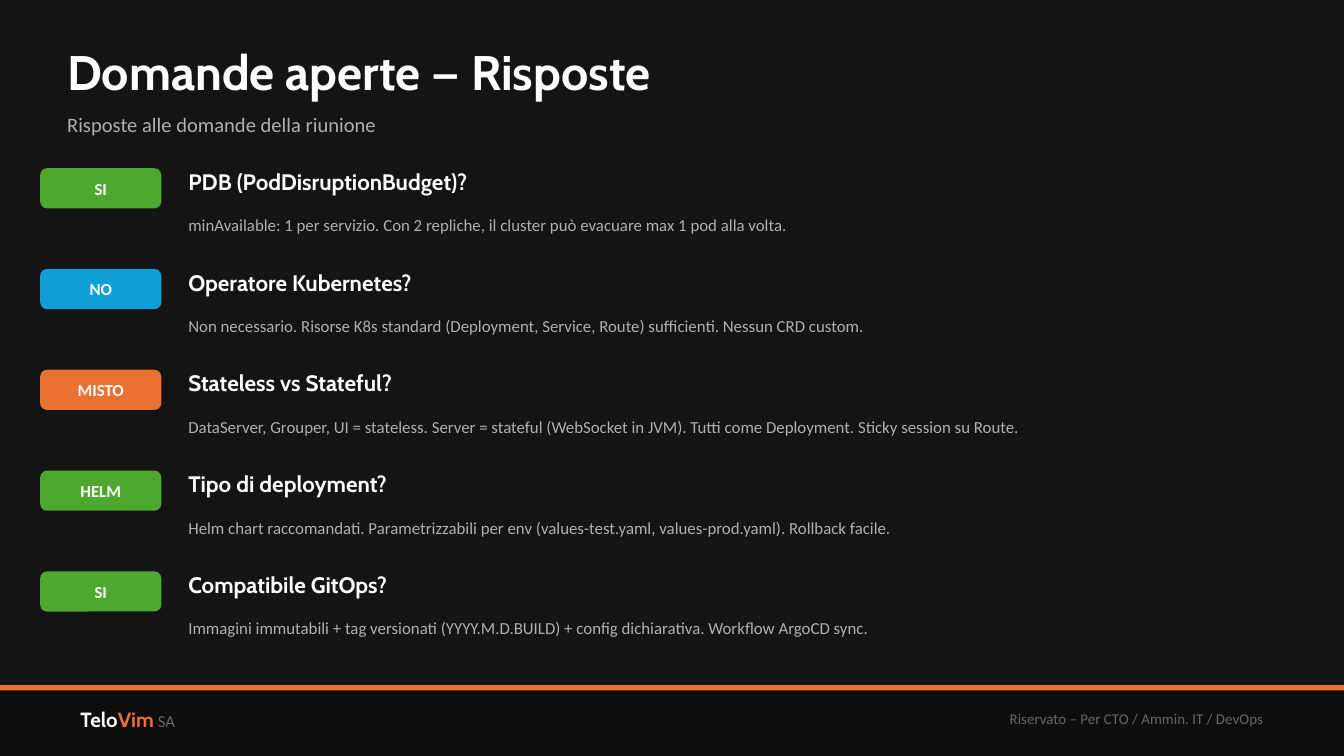
import pptx
import pptx.dml.color
import pptx.enum.shapes
import pptx.enum.text
import pptx.util

Cm = pptx.util.Cm
ALIGN = pptx.enum.text.PP_ALIGN
SHAPE = pptx.enum.shapes.MSO_SHAPE

COLOURS = {
    "background": "141414",
    "footer": "0D0D0D",
    "white": "FFFFFF",
    "soft": "B0B0B0",
    "dim": "666666",
    "orange": "E97132",
    "green": "4EA72E",
    "blue": "0F9ED5",
}
HEADING_FONT = "Cabin"
BODY_FONT = "Calibri"

PAGE_WIDTH = 25.4
PAGE_HEIGHT = 14.29
MARGIN = 1.27
FOOTER_TOP = 12.95
FIRST_ROW_TOP = 3.05
ROW_STEP = 7.62 / 4

ANSWERS = [
    ("SI", "green", "PDB (PodDisruptionBudget)?",
     "minAvailable: 1 per servizio. Con 2 repliche, il cluster può evacuare max 1 pod alla volta."),
    ("NO", "blue", "Operatore Kubernetes?",
     "Non necessario. Risorse K8s standard (Deployment, Service, Route) sufficienti. "
     "Nessun CRD custom."),
    ("MISTO", "orange", "Stateless vs Stateful?",
     "DataServer, Grouper, UI = stateless. Server = stateful (WebSocket in JVM). "
     "Tutti come Deployment. Sticky session su Route."),
    ("HELM", "green", "Tipo di deployment?",
     "Helm chart raccomandati. Parametrizzabili per env (values-test.yaml, values-prod.yaml). "
     "Rollback facile."),
    ("SI", "green", "Compatibile GitOps?",
     "Immagini immutabili + tag versionati (YYYY.M.D.BUILD) + config dichiarativa. "
     "Workflow ArgoCD sync."),
]


def colour(name):
    return pptx.dml.color.RGBColor.from_string(COLOURS[name])


def write_text(box, spans, align=ALIGN.LEFT, inset=0):
    frame = box.text_frame
    frame.word_wrap = True
    frame.vertical_anchor = pptx.enum.text.MSO_ANCHOR.MIDDLE
    frame.margin_left = frame.margin_right = Cm(inset)
    frame.margin_top = frame.margin_bottom = Cm(inset / 2)
    para = frame.paragraphs[0]
    para.alignment = align
    for text, font, size, tint, bold in spans:
        span = para.add_run()
        span.text = text
        span.font.name = font
        span.font.size = pptx.util.Pt(size)
        span.font.bold = bold
        span.font.color.rgb = colour(tint)


def add_text(page, left, top, width, height, spans, align=ALIGN.LEFT, inset=0):
    box = page.shapes.add_textbox(Cm(left), Cm(top), Cm(width), Cm(height))
    write_text(box, spans, align, inset)


def add_block(page, kind, left, top, width, height, fill):
    block = page.shapes.add_shape(kind, Cm(left), Cm(top), Cm(width), Cm(height))
    block.shadow.inherit = False
    block.fill.solid()
    block.fill.fore_color.rgb = colour(fill)
    block.line.fill.background()
    return block


def add_header(page):
    width = PAGE_WIDTH - 2 * MARGIN
    add_text(page, MARGIN, 0.64, width, 1.4,
             [("Domande aperte — Risposte", HEADING_FONT, 26, "white", True)])
    add_text(page, MARGIN, 1.9, width, 0.89,
             [("Risposte alle domande della riunione", BODY_FONT, 11, "soft", False)])


def add_answer(page, top, label, fill, question, answer):
    badge = add_block(page, SHAPE.ROUNDED_RECTANGLE, 0.76, top + 0.13, 2.29, 0.76, fill)
    badge.adjustments[0] = 0.17
    write_text(badge, [(label, BODY_FONT, 9, "white", True)], ALIGN.CENTER)
    add_text(page, 3.56, top, 21.08, 0.76, [(question, HEADING_FONT, 12, "white", True)])
    add_text(page, 3.56, top + 0.76, 21.08, 0.89, [(answer, BODY_FONT, 9, "soft", False)])


def add_footer(page):
    add_block(page, SHAPE.RECTANGLE, 0, FOOTER_TOP, PAGE_WIDTH, PAGE_HEIGHT - FOOTER_TOP, "footer")
    add_block(page, SHAPE.RECTANGLE, 0, FOOTER_TOP, PAGE_WIDTH, 0.1, "orange")
    text_top = FOOTER_TOP + 0.13
    company = [
        ("Telo", HEADING_FONT, 11, "white", True),
        ("Vim", HEADING_FONT, 11, "orange", True),
        (" SA", BODY_FONT, 9, "dim", False),
    ]
    add_text(page, MARGIN, text_top, 7.62, 1.02, company, inset=0.25)
    notice = [("Riservato – Per CTO / Ammin. IT / DevOps", BODY_FONT, 8, "dim", False)]
    add_text(page, PAGE_WIDTH - MARGIN - 10.16, text_top, 10.16, 1.02, notice,
             ALIGN.RIGHT, inset=0.25)


def main():
    deck = pptx.Presentation()
    deck.slide_width = Cm(PAGE_WIDTH)
    deck.slide_height = Cm(PAGE_HEIGHT)
    page = deck.slides.add_slide(deck.slide_layouts[6])
    page.background.fill.solid()
    page.background.fill.fore_color.rgb = colour("background")
    add_footer(page)
    add_header(page)
    for row, answer in enumerate(ANSWERS):
        add_answer(page, FIRST_ROW_TOP + row * ROW_STEP, *answer)
    deck.save("out.pptx")


if __name__ == "__main__":
    main()
